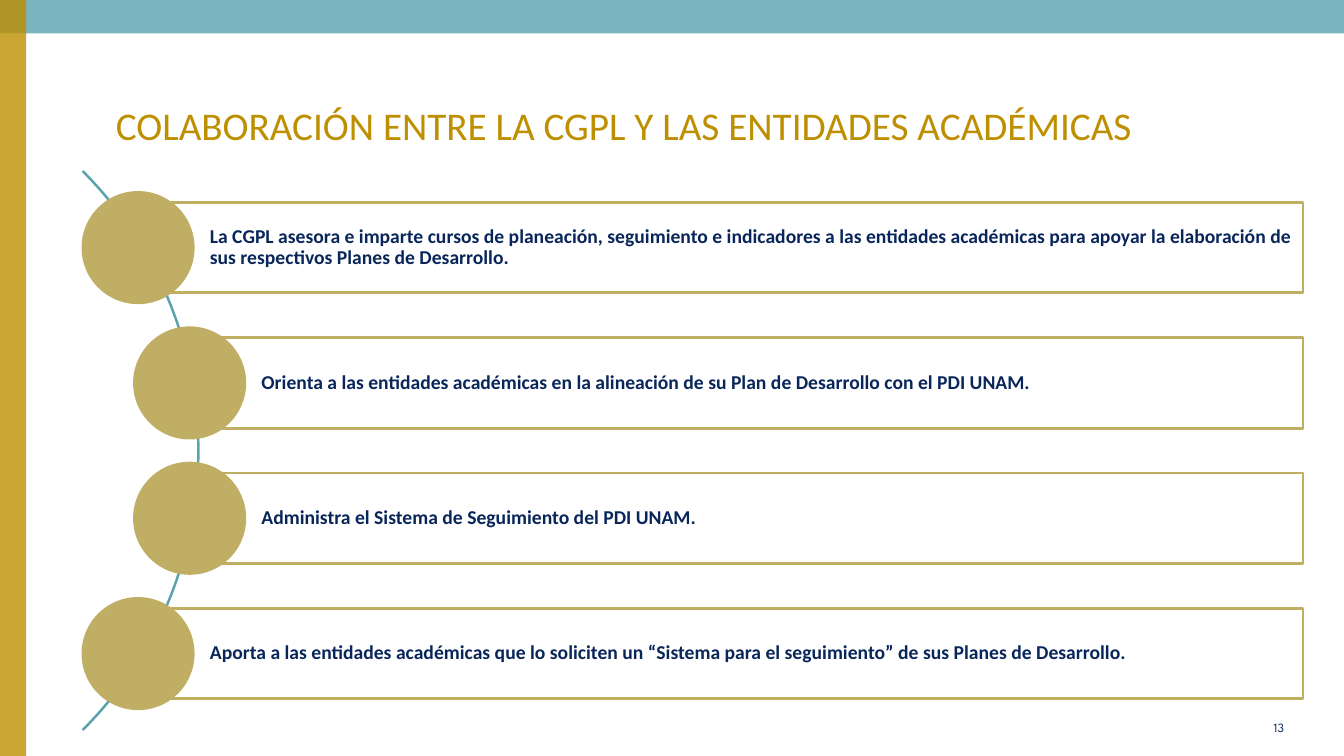
import math
import lxml.etree
import pptx
import pptx.dml.color
import pptx.enum.shapes
import pptx.enum.text
import pptx.oxml.ns
import pptx.util

TITLE = "COLABORACIÓN ENTRE LA CGPL Y LAS ENTIDADES ACADÉMICAS"
ROWS = [
    (3.48, "La CGPL asesora e imparte cursos de planeación, seguimiento e indicadores a las entidades "
           "académicas para apoyar la elaboración de sus respectivos Planes de Desarrollo."),
    (4.78, "Orienta a las entidades académicas en la alineación de su Plan de Desarrollo con el PDI UNAM."),
    (4.78, "Administra el Sistema de Seguimiento del PDI UNAM."),
    (3.48, "Aporta a las entidades académicas que lo soliciten un “Sistema para el seguimiento” "
           "de sus Planes de Desarrollo."),
]
PAGE = "13"
HUES = {"teal": "5AA2AE", "gold": "BD8F01", "sand": "BFAE63", "navy": "09265B"}

WIDE, HIGH = 33.87, 19.05
RIGHT, FIRST, PITCH = 32.84, 6.24, 3.41
BOX, DISC = 2.28, 2.85
MID = FIRST + PITCH * (len(ROWS) - 1) / 2
ARC_X, ARC_R = -4.96, 9.96

Cm = pptx.util.Cm
KIND = pptx.enum.shapes.MSO_SHAPE
ALIGN = pptx.enum.text.PP_ALIGN


def hue(name):
    return pptx.dml.color.RGBColor.from_string(HUES[name])


def write(frame, text, size, color="navy", face="Calibri", bold=False,
          align=ALIGN.LEFT, inset=(0.25, 0.13, 0.25, 0.13), space=None):
    frame.word_wrap = True
    frame.auto_size = pptx.enum.text.MSO_AUTO_SIZE.NONE
    frame.vertical_anchor = pptx.enum.text.MSO_ANCHOR.MIDDLE
    (frame.margin_left, frame.margin_top,
     frame.margin_right, frame.margin_bottom) = [Cm(side) for side in inset]
    para = frame.paragraphs[0]
    para.alignment = align
    para.line_spacing = space
    run = para.add_run()
    run.text = text
    run.font.name = face
    run.font.size = pptx.util.Pt(size)
    run.font.bold = bold
    run.font.color.rgb = hue(color)


def draw(shapes, kind, left, top, width, height, fill=None, line=None, alpha=None):
    shape = shapes.add_shape(kind, Cm(left), Cm(top), Cm(width), Cm(height))
    shape.shadow.inherit = False
    if fill:
        shape.fill.solid()
        shape.fill.fore_color.rgb = hue(fill)
    else:
        shape.fill.background()
    if line:
        shape.line.color.rgb = hue(line)
        shape.line.width = pptx.util.Pt(2)
    else:
        shape.line.fill.background()
    if alpha:
        tone = shape.fill._xPr.find(".//" + pptx.oxml.ns.qn("a:srgbClr"))
        lxml.etree.SubElement(tone, pptx.oxml.ns.qn("a:alpha")).set("val", str(alpha * 1000))
    return shape


def curve(shapes):
    dots = [(Cm(ARC_X + ARC_R * math.cos(math.radians(deg))),
             Cm(MID + ARC_R * math.sin(math.radians(deg)))) for deg in range(-45, 46)]
    path = shapes.build_freeform(*dots[0])
    path.add_line_segments(dots[1:], close=False)
    arc = path.convert_to_shape()
    arc.shadow.inherit = False
    arc.fill.background()
    arc.line.color.rgb = hue("teal")
    arc.line.width = pptx.util.Pt(1.75)


def main():
    deck = pptx.Presentation()
    deck.slide_width, deck.slide_height = Cm(WIDE), Cm(HIGH)
    slide = deck.slides.add_slide(deck.slide_layouts[5])
    shapes = slide.shapes

    draw(shapes, KIND.RECTANGLE, 0, 0, WIDE, 0.84, fill="teal", alpha=80)
    draw(shapes, KIND.RECTANGLE, 0, 0, 0.66, HIGH, fill="gold", alpha=80)

    title = shapes.title
    title.left, title.top, title.width, title.height = Cm(2.67), Cm(1.7), Cm(29.95), Cm(2.9)
    write(title.text_frame, TITLE, 28, color="gold")

    curve(shapes)
    for step, (left, text) in enumerate(ROWS):
        mid = FIRST + PITCH * step
        box = draw(shapes, KIND.RECTANGLE, left, mid - BOX / 2, RIGHT - left, BOX, line="sand")
        write(box.text_frame, text, 14, bold=True, space=0.9, inset=(1.81, 0.1, 0.1, 0.1))
        draw(shapes, KIND.OVAL, left - DISC / 2, mid - DISC / 2, DISC, DISC, fill="sand")

    page = shapes.add_textbox(Cm(31.09), Cm(17.81), Cm(1.52), Cm(1.02))
    write(page.text_frame, PAGE, 9, face="League Spartan", align=ALIGN.RIGHT)
    deck.save("out.pptx")


if __name__ == "__main__":
    main()
